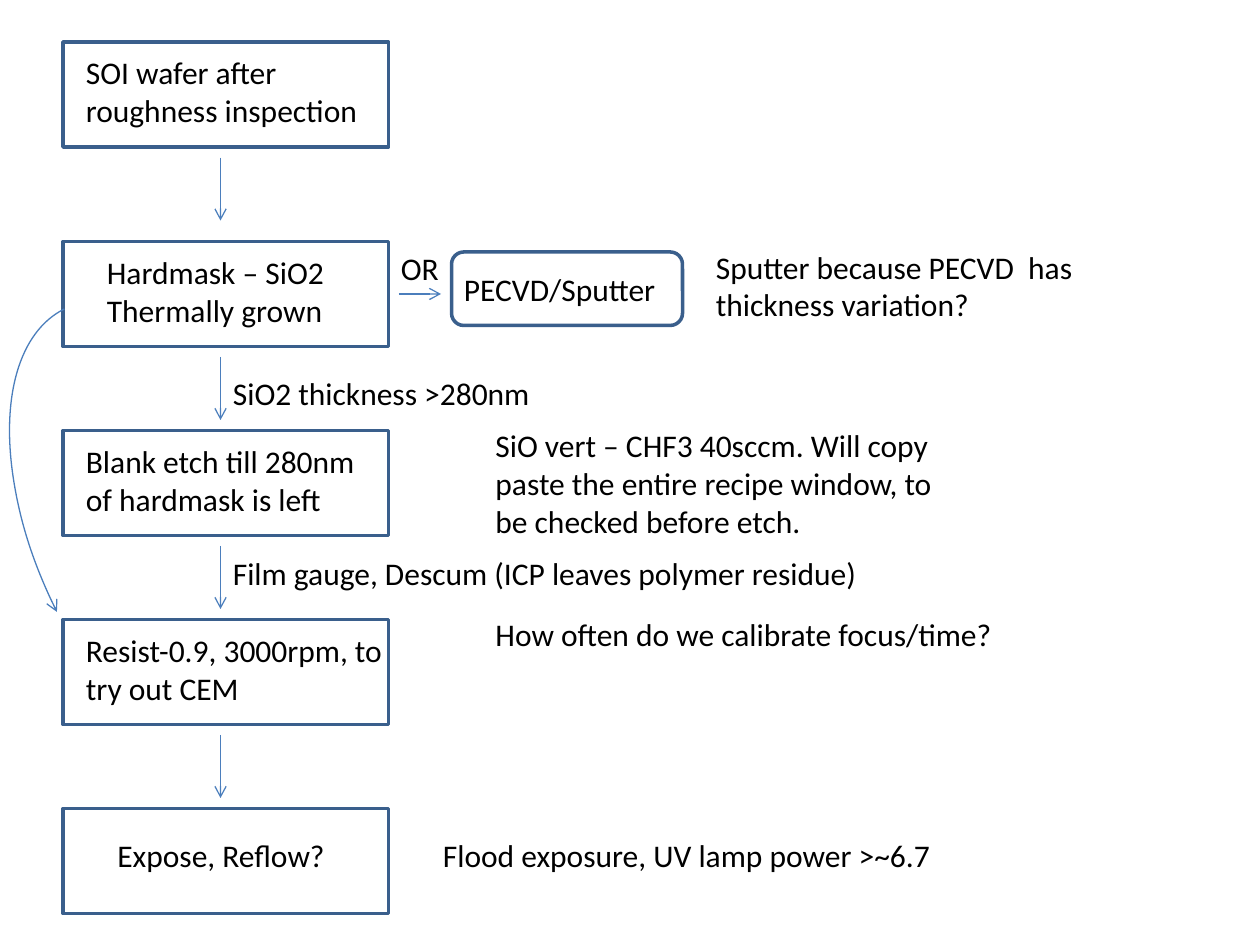
import pptx
import pptx.util
import pptx.dml.color
import pptx.enum.shapes
import pptx.enum.text
import lxml.etree
from pptx.oxml.ns import qn

SHAPES = pptx.enum.shapes.MSO_SHAPE
COLUMNS, ROWS = 120, 90
WIDTH, HEIGHT = pptx.util.Inches(10), pptx.util.Inches(7.5)
BORDER, ARROW, INK = "3A5F8C", "4B7EBC", "000000"
STEP_WIDTH, STEP_HEIGHT = 31, 10
LINE_ROWS = {1: 4.8, 2: 8.5, 3: 12.1}


def color(value):
    return pptx.dml.color.RGBColor.from_string(value)


def across(columns):
    return round(WIDTH * columns / COLUMNS)


def down(rows):
    return round(HEIGHT * rows / ROWS)


def place(left, top, width, height):
    return across(left), down(top), across(width), down(height)


def add_text(slide, left, top, width, lines, row_count):
    text_box = slide.shapes.add_textbox(*place(left, top, width, LINE_ROWS[row_count]))
    frame = text_box.text_frame
    frame.word_wrap = True
    frame.auto_size = pptx.enum.text.MSO_AUTO_SIZE.SHAPE_TO_FIT_TEXT
    for index, line in enumerate(lines):
        paragraph = frame.add_paragraph() if index else frame.paragraphs[0]
        run = paragraph.add_run()
        run.text = line
        run.font.name = "Calibri"
        run.font.size = pptx.util.Pt(18)
        run.font.color.rgb = color(INK)


def add_outline(slide, kind, box, line_color, line_width):
    shape = slide.shapes.add_shape(kind, *place(*box))
    shape.shadow.inherit = False
    shape.fill.background()
    shape.line.color.rgb = color(line_color)
    shape.line.width = pptx.util.Pt(line_width)
    return shape


def add_arrowhead(shape, end):
    line = shape.line._get_or_add_ln()
    lxml.etree.SubElement(line, qn(f"a:{end}"), type="arrow")


def add_arrow(slide, left, top, right, bottom):
    connector = slide.shapes.add_connector(
        pptx.enum.shapes.MSO_CONNECTOR.STRAIGHT,
        across(left), down(top), across(right), down(bottom))
    connector.line.color.rgb = color(ARROW)
    connector.line.width = pptx.util.Pt(0.75)
    add_arrowhead(connector, "tailEnd")
    lxml.etree.SubElement(connector._element.spPr, qn("a:effectLst"))


def add_step(slide, left, top, indent, text_width, lines, row_count):
    box = (left, top, STEP_WIDTH, STEP_HEIGHT)
    add_outline(slide, SHAPES.FLOWCHART_PROCESS, box, BORDER, 2)
    text_top = top + (0.5 if row_count == 2 else 2)
    add_text(slide, left + indent, text_top, text_width, lines, row_count)


def add_process(slide, left, tops, steps):
    for top, step in zip(tops, steps):
        add_step(slide, left, top, *step)
    for top in tops[:-1]:
        start = top + STEP_HEIGHT + 1
        add_arrow(slide, left + 15, start, left + 15, start + 6)


def add_alternative(slide, left, top):
    add_text(slide, left, top + 0.1, 7, ["OR"], 1)
    add_arrow(slide, left + 1, top + 5, left + 5, top + 5)
    add_outline(slide, SHAPES.ROUNDED_RECTANGLE, (left + 6, top + 1, 22, 7), BORDER, 2)
    add_text(slide, left + 6, top + 2.1, 21, ["PECVD/Sputter"], 1)
    add_text(slide, left + 30, top, 41,
             ["Sputter because PECVD  has thickness variation?"], 2)


def add_bypass(slide, left, top):
    arc = add_outline(slide, SHAPES.ARC, (left, top, 51, 27), ARROW, 0.75)
    arc.rotation = 243.5
    add_arrowhead(arc, "headEnd")


def add_notes(slide, notes):
    for left, top, width, words, row_count in notes:
        add_text(slide, left, top, width, [words], row_count)


def main():
    presentation = pptx.Presentation()
    presentation.slide_width, presentation.slide_height = WIDTH, HEIGHT
    slide = presentation.slides.add_slide(presentation.slide_layouts[6])
    tops = [4] + [23 + 18 * index for index in range(4)]
    steps = [
        (1, 30, ["SOI wafer after roughness inspection"], 2),
        (3, 24, ["Hardmask – SiO2", "Thermally grown"], 2),
        (1, 29, ["Blank etch till 280nm of hardmask is left"], 2),
        (1, 31, ["Resist-0.9, 3000rpm, to try out CEM"], 2),
        (4, 23, ["Expose, Reflow?"], 1),
    ]
    add_process(slide, 6, tops, steps)
    add_alternative(slide, 37, tops[1])
    add_bypass(slide, -8, 38.75)
    add_notes(slide, [
        (21, 35, 33, "SiO2 thickness >280nm", 1),
        (46, 40, 44, "SiO vert – CHF3 40sccm. Will copy paste the entire recipe "
                     "window, to be checked before etch.", 3),
        (21, 52.2, 65, "Film gauge, Descum (ICP leaves polymer residue)", 1),
        (46, 58, 52, "How often do we calibrate focus/time?", 1),
        (41, 79, 52, "Flood exposure, UV lamp power >~6.7", 1),
    ])
    presentation.save("out.pptx")


if __name__ == "__main__":
    main()
